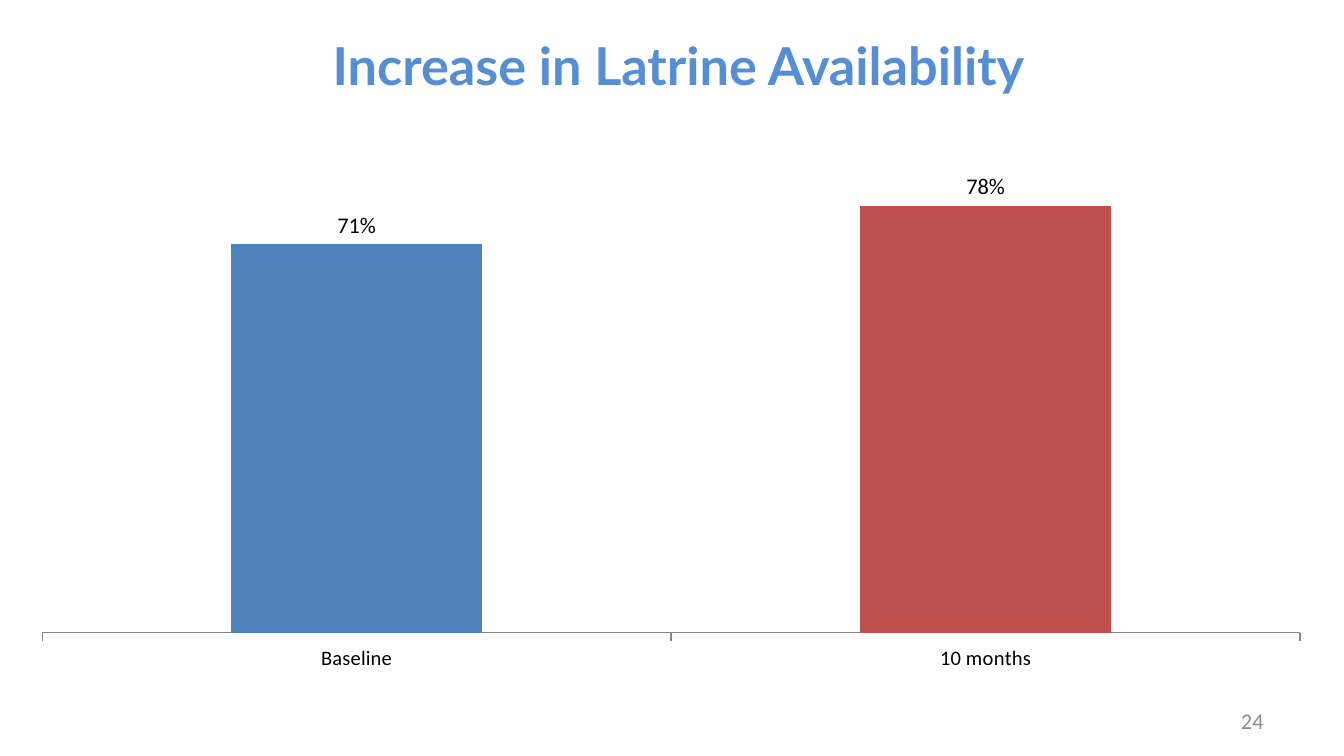
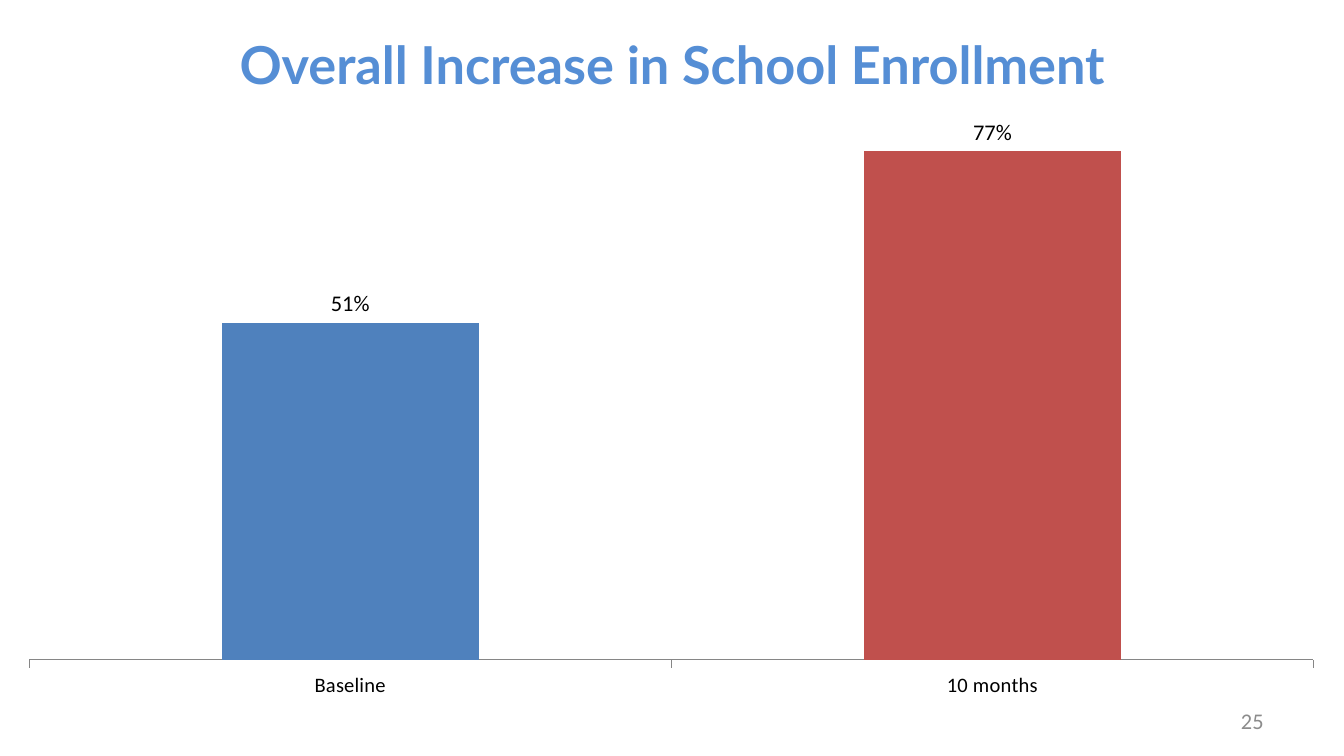
"""Build two slides of column charts comparing baseline with 10 months."""
from lxml.etree import SubElement
from pptx import Presentation
from pptx.chart.data import CategoryChartData
from pptx.dml.color import RGBColor
from pptx.enum.chart import XL_CHART_TYPE, XL_LABEL_POSITION, XL_TICK_MARK
from pptx.enum.text import MSO_ANCHOR, PP_ALIGN
from pptx.oxml.ns import qn
from pptx.util import Pt

COLORS = {
    "title": "558ED5",
    "number": "8C8C8C",
    "text": "000000",
    "axis": "868686",
    "baseline": "4F81BD",
    "months": "C0504D",
}
PERIODS = ["Baseline", "10 months"]
SLIDES = [
    {
        "title": " Increase in Latrine Availability",
        "title_height": 26.6,
        "shares": [0.71, 0.78],
        "chart_box": (8.6, 69.1, 702, 296.6),
        "plot": (0.02, 0.02, 0.96, 0.89),
        "axis_max": 0.9,
        "number": "24",
    },
    {
        "title": "Overall Increase in School Enrollment",
        "title_height": 25.2,
        "shares": [0.51, 0.77],
        "chart_box": (7.2, 54, 705, 321),
        "plot": (0.012, 0.051, 0.976, 0.882),
        "axis_max": 0.8,
        "number": "25",
    },
]


def add_text(slide, text, box, align, font_name, size, color, bold=False):
    frame = slide.shapes.add_textbox(*map(Pt, box)).text_frame
    frame.word_wrap = True
    frame.vertical_anchor = MSO_ANCHOR.MIDDLE
    frame.text = text
    frame.paragraphs[0].alignment = align
    font = frame.paragraphs[0].runs[0].font
    font.name, font.size, font.bold = font_name, Pt(size), bold
    font.color.rgb = RGBColor.from_string(COLORS[color])


def place_plot(chart, fractions):
    plot_area = chart.plots[0]._element.getparent()
    for old_layout in plot_area.findall(qn("c:layout")):
        plot_area.remove(old_layout)
    layout = SubElement(plot_area, qn("c:layout"))
    plot_area.insert(0, layout)
    manual = SubElement(layout, qn("c:manualLayout"))
    settings = [("layoutTarget", "inner"), ("xMode", "edge"), ("yMode", "edge")]
    settings += zip("xywh", fractions)
    for tag, value in settings:
        SubElement(manual, qn(f"c:{tag}")).set("val", str(value))


prs = Presentation()
prs.slide_width, prs.slide_height = Pt(720), Pt(405)

for content in SLIDES:
    slide = prs.slides.add_slide(prs.slide_layouts[6])
    add_text(slide, content["title"], (49.7, 21.6, 620.6, content["title_height"]),
             PP_ALIGN.CENTER, "Lato", 28, "title", bold=True)

    data = CategoryChartData(number_format="0%")
    data.categories = PERIODS
    data.add_series("Series 1", content["shares"])
    chart = slide.shapes.add_chart(
        XL_CHART_TYPE.COLUMN_CLUSTERED, *map(Pt, content["chart_box"]), data).chart
    chart.has_legend = False
    chart.has_title = False
    chart.font.name, chart.font.size = "Calibri", Pt(12)
    chart.font.color.rgb = RGBColor.from_string(COLORS["text"])
    place_plot(chart, content["plot"])

    period_axis = chart.category_axis
    period_axis.major_tick_mark = XL_TICK_MARK.OUTSIDE
    period_axis.tick_labels.font.size = Pt(11)
    period_axis.format.line.width = Pt(0.75)
    period_axis.format.line.color.rgb = RGBColor.from_string(COLORS["axis"])

    share_axis = chart.value_axis
    share_axis.minimum_scale, share_axis.maximum_scale = 0, content["axis_max"]
    share_axis.has_major_gridlines = False
    share_axis.tick_labels.number_format = "0%"
    share_axis.tick_labels.number_format_is_linked = False
    share_axis.visible = False

    columns = chart.plots[0]
    columns.gap_width = 150
    columns.vary_by_categories = False
    shares = columns.series[0]
    for index, period in enumerate(("baseline", "months")):
        fill = shares.points[index].format.fill
        fill.solid()
        fill.fore_color.rgb = RGBColor.from_string(COLORS[period])
    labels = shares.data_labels
    labels.show_value = True
    labels.number_format = "0%"
    labels.number_format_is_linked = False
    labels.position = XL_LABEL_POSITION.OUTSIDE_END

    add_text(slide, content["number"], (516, 375.4, 168, 21.6),
             PP_ALIGN.RIGHT, "Calibri", 12, "number")

prs.save("out.pptx")
